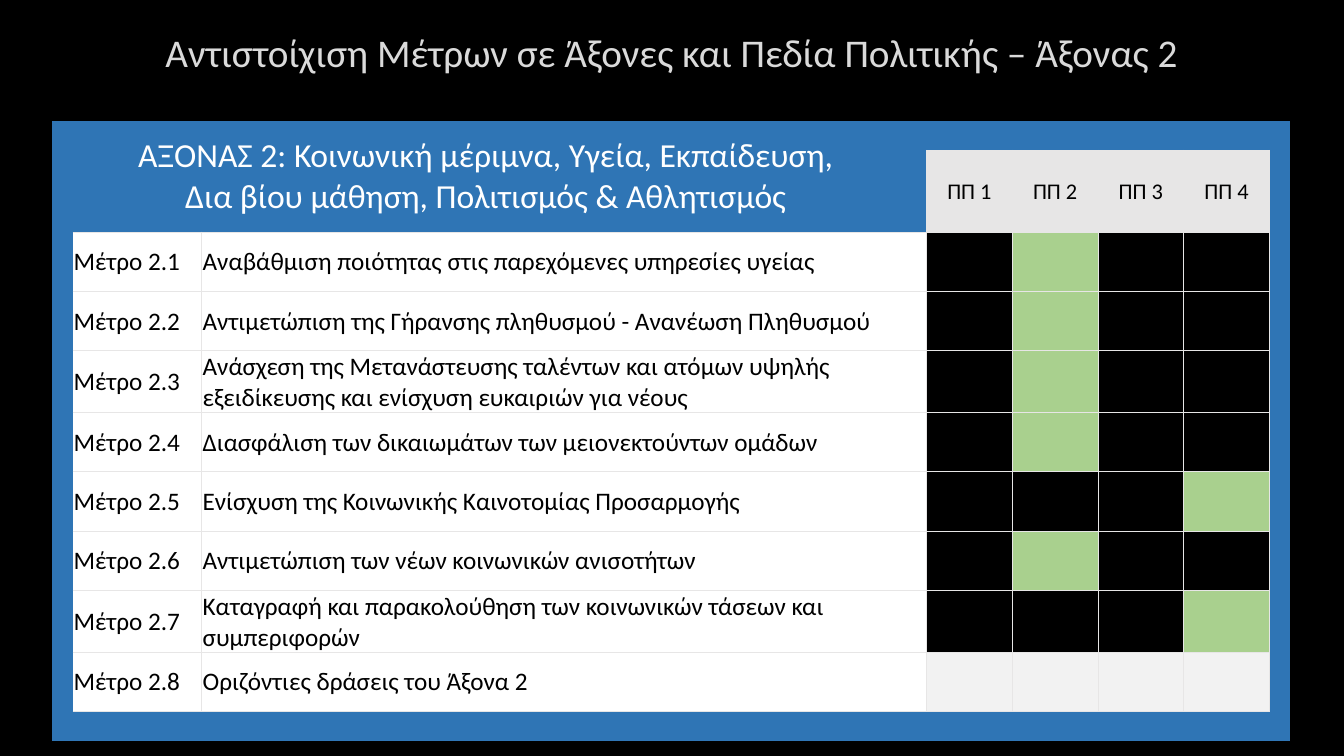
from dataclasses import dataclass
from lxml.etree import SubElement
from pptx import Presentation
from pptx.dml.color import RGBColor
from pptx.enum.text import MSO_ANCHOR, PP_ALIGN
from pptx.oxml import parse_xml
from pptx.oxml.ns import nsdecls, qn
from pptx.util import Inches, Pt


@dataclass(frozen=True)
class Theme:
    """Colours, font and type sizes of the slide."""
    font: str = "Calibri"
    background: str = "000000"
    title: str = "DADADA"
    outline: str = "404040"
    frame: str = "2F75B5"
    grid: str = "E7E6E6"
    paper: str = "FFFFFF"
    ink: str = "000000"
    match: str = "A9D08E"
    horizontal: str = "F2F2F2"
    title_size: int = 28
    axis_size: int = 24
    measure_size: int = 18
    field_size: int = 16
    empty_size: int = 8
    border_width: float = 0.5


THEME = Theme()
TITLE = "Αντιστοίχιση Μέτρων σε Άξονες και Πεδία Πολιτικής – Άξονας 2"
AXIS = ("ΑΞΟΝΑΣ 2: Κοινωνική μέριμνα, Υγεία, Εκπαίδευση, ",
        "Δια βίου μάθηση, Πολιτισμός & Αθλητισμός ")
FIELD_COUNT = 4
MEASURES = [
    ("Αναβάθμιση ποιότητας στις παρεχόμενες υπηρεσίες υγείας", 2),
    ("Αντιμετώπιση της Γήρανσης πληθυσμού - Ανανέωση Πληθυσμού", 2),
    ("Ανάσχεση της Μετανάστευσης ταλέντων και ατόμων υψηλής "
     "εξειδίκευσης και ενίσχυση ευκαιριών για νέους", 2),
    ("Διασφάλιση των δικαιωμάτων των μειονεκτούντων ομάδων", 2),
    ("Ενίσχυση της Κοινωνικής Καινοτομίας Προσαρμογής", 4),
    ("Αντιμετώπιση των νέων κοινωνικών ανισοτήτων", 2),
    ("Καταγραφή και παρακολούθηση των κοινωνικών τάσεων και συμπεριφορών", 4),
    ("Οριζόντιες δράσεις του Άξονα 2", None),
]
COLUMN_WIDTHS = [0.2, 1.28, 7.19] + [0.85] * FIELD_COUNT + [0.2]
ROW_HEIGHTS = [0.29] + [0.59] * (len(MEASURES) + 1) + [0.29]
FIRST_FIELD, FIRST_MEASURE = 3, 2


def add_run(paragraph, text, size, color):
    """Add one formatted run to a paragraph."""
    run = paragraph.add_run()
    run.text = text
    run.font.name = THEME.font
    run.font.size = Pt(size)
    run.font.color.rgb = RGBColor.from_string(color)
    return run


def add_title(slide):
    """Add the centred title with its faint letter outline."""
    box = slide.shapes.add_textbox(Inches(1), Inches(0.16), Inches(11.32), Inches(0.71))
    frame = box.text_frame
    frame.word_wrap = True
    frame.vertical_anchor = MSO_ANCHOR.MIDDLE
    paragraph = frame.paragraphs[0]
    paragraph.alignment = PP_ALIGN.CENTER
    run = add_run(paragraph, TITLE, THEME.title_size, THEME.title)
    outline = parse_xml(
        f'<a:ln {nsdecls("a")} w="{Pt(0.75)}"><a:solidFill><a:srgbClr val="{THEME.outline}">'
        '<a:alpha val="10000"/></a:srgbClr></a:solidFill><a:prstDash val="solid"/></a:ln>')
    run.font._element.insert(0, outline)


def in_grid(row, column):
    """Tell whether a cell lies inside the bordered grid."""
    last_field = FIRST_FIELD + FIELD_COUNT
    if row == 1:
        return FIRST_FIELD <= column < last_field
    return FIRST_MEASURE <= row < FIRST_MEASURE + len(MEASURES) and 1 <= column < last_field


def set_borders(cell, row, column):
    """Draw the grid lines around a cell and clear its other edges."""
    properties = cell._tc.get_or_add_tcPr()
    neighbours = {"lnL": (row, column - 1), "lnR": (row, column + 1),
                  "lnT": (row - 1, column), "lnB": (row + 1, column)}
    for index, (edge, neighbour) in enumerate(neighbours.items()):
        frame_edge = (edge, column) in (("lnL", 1), ("lnR", 0))
        visible = not frame_edge and (in_grid(row, column) or in_grid(*neighbour))
        line = parse_xml(f'<a:{edge} {nsdecls("a")} w="{Pt(THEME.border_width)}"/>')
        fill = SubElement(line, qn("a:solidFill" if visible else "a:noFill"))
        if visible:
            SubElement(fill, qn("a:srgbClr"), val=THEME.grid)
        properties.insert(index, line)


def cell_fill(row, column):
    """Return the fill colour of a cell, or None where the background shows."""
    if not in_grid(row, column):
        return THEME.frame
    if row == 1:
        return THEME.grid
    if column < FIRST_FIELD:
        return THEME.paper
    field = MEASURES[row - FIRST_MEASURE][1]
    if field is None:
        return THEME.horizontal
    return THEME.match if column - FIRST_FIELD + 1 == field else None


def style_cell(cell, row, column):
    """Set the margins, fill and borders of a cell."""
    cell.margin_left = cell.margin_right = cell.margin_top = Inches(0.01)
    cell.margin_bottom = 0
    cell.vertical_anchor = MSO_ANCHOR.MIDDLE
    cell.text_frame.paragraphs[0].font.size = Pt(THEME.empty_size)
    color = cell_fill(row, column)
    if color:
        cell.fill.solid()
        cell.fill.fore_color.rgb = RGBColor.from_string(color)
    else:
        cell.fill.background()
    set_borders(cell, row, column)


def write_cell(cell, lines, size, color, alignment=PP_ALIGN.LEFT):
    """Write lines of text into a cell."""
    paragraph = cell.text_frame.paragraphs[0]
    paragraph.alignment = alignment
    for index, text in enumerate(lines):
        if index:
            paragraph.add_line_break()
        add_run(paragraph, text, size, color)


def add_measure_table(slide):
    """Add the table that matches measures to policy fields."""
    table = slide.shapes.add_table(
        len(ROW_HEIGHTS), len(COLUMN_WIDTHS), Inches(0.52), Inches(1.2),
        Inches(sum(COLUMN_WIDTHS)), Inches(sum(ROW_HEIGHTS))).table
    table.first_row = table.horz_banding = False
    for column, width in enumerate(COLUMN_WIDTHS):
        table.columns[column].width = Inches(width)
    for row, height in enumerate(ROW_HEIGHTS):
        table.rows[row].height = Inches(height)
        for column in range(len(COLUMN_WIDTHS)):
            style_cell(table.cell(row, column), row, column)
    table.cell(0, 0).merge(table.cell(1, FIRST_FIELD - 1))
    write_cell(table.cell(0, 0), AXIS, THEME.axis_size, THEME.paper, PP_ALIGN.CENTER)
    for field in range(FIELD_COUNT):
        write_cell(table.cell(1, FIRST_FIELD + field), [f"ΠΠ {field + 1}"],
                   THEME.field_size, THEME.ink, PP_ALIGN.CENTER)
    for index, (measure, _) in enumerate(MEASURES):
        row = FIRST_MEASURE + index
        for column, text in enumerate((f"Μέτρο 2.{index + 1}", measure), start=1):
            write_cell(table.cell(row, column), [text], THEME.measure_size, THEME.ink)


def main():
    """Build the slide and save it."""
    presentation = Presentation()
    presentation.slide_width = Inches(13.33)
    presentation.slide_height = Inches(7.5)
    slide = presentation.slides.add_slide(presentation.slide_layouts[6])
    slide.background.fill.solid()
    slide.background.fill.fore_color.rgb = RGBColor.from_string(THEME.background)
    add_title(slide)
    add_measure_table(slide)
    presentation.save("out.pptx")


if __name__ == "__main__":
    main()
